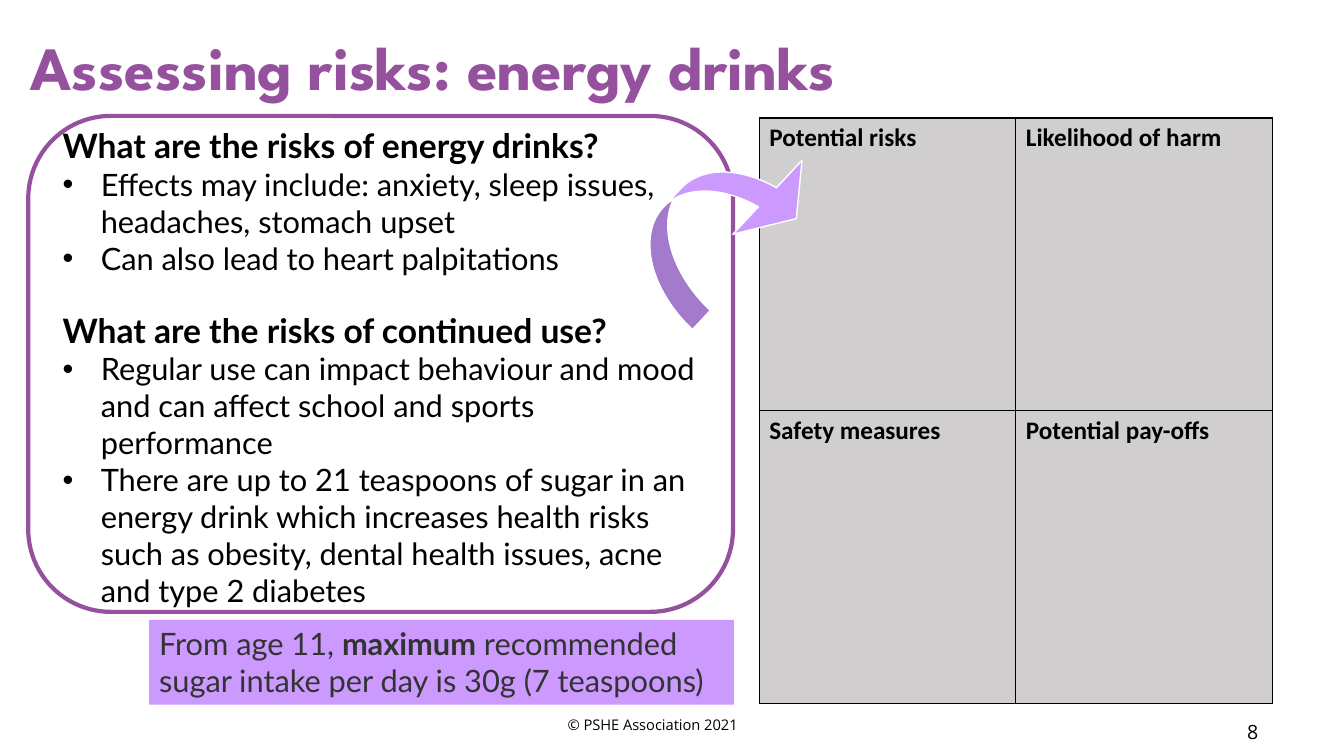
from dataclasses import dataclass

import pptx
import pptx.dml.color
import pptx.enum.shapes
import pptx.enum.text
import pptx.oxml
import pptx.oxml.ns
import pptx.util
from pptx.util import Inches

PURPLE, LILAC, GREY = "95519E", "CC99FF", "D0CECE"
BLACK, WHITE, DARK = "000000", "FFFFFF", "333333"
LEFT = pptx.enum.text.PP_ALIGN.LEFT
CENTER = pptx.enum.text.PP_ALIGN.CENTER
TOP = pptx.enum.text.MSO_ANCHOR.TOP
MIDDLE = pptx.enum.text.MSO_ANCHOR.MIDDLE
SHAPE = pptx.enum.shapes.MSO_SHAPE


@dataclass
class Style:
    font: str
    size: float
    color: str = BLACK
    bold: bool = False


@dataclass
class Topic:
    head: str
    points: list[str]
    gap: float = 0


TOPICS = [
    Topic("What are the risks of energy drinks?", [
        "Effects may include: anxiety, sleep issues, headaches, stomach upset",
        "Can also lead to heart palpitations",
    ]),
    Topic("What are the risks of continued use?", [
        "Regular use can impact behaviour and mood and can affect school "
        "and sports performance",
        "There are up to 21 teaspoons of sugar in an energy drink which "
        "increases health risks such as obesity, dental health issues, "
        "acne and type 2 diabetes",
    ], gap=24),
]
GRID = [["Potential risks", "Likelihood of harm"],
        ["Safety measures", "Potential pay-offs"]]


def paint(target, color: str) -> None:
    """Give a fill, or a font's or line's fill, one solid colour."""
    target.solid()
    target.fore_color.rgb = pptx.dml.color.RGBColor.from_string(color)


def node(tag: str, attrs: str = "", inner: str = ""):
    space = pptx.oxml.ns.nsdecls("a")
    return pptx.oxml.parse_xml(f"<a:{tag} {space} {attrs}>{inner}</a:{tag}>")


def place(shape, left: float, top: float, width: float, height: float) -> None:
    shape.left, shape.top = Inches(left), Inches(top)
    shape.width, shape.height = Inches(width), Inches(height)


def write(para, text: str, style: Style, align=LEFT) -> None:
    para.alignment = align
    para.line_spacing = 1.0
    run = para.add_run()
    run.text = text
    run.font.name = style.font
    run.font.size = pptx.util.Pt(style.size)
    run.font.bold = style.bold
    paint(run.font.fill, style.color)


def setup(frame, anchor=TOP) -> None:
    frame.word_wrap = True
    frame.auto_size = pptx.enum.text.MSO_AUTO_SIZE.NONE
    frame.vertical_anchor = anchor


def draw(slide, kind, box: tuple, fill: str, line: str = "", width: float = 0):
    shape = slide.shapes.add_shape(kind, *map(Inches, box))
    shape.shadow.inherit = False
    paint(shape.fill, fill)
    if line:
        paint(shape.line.fill, line)
        shape.line.width = pptx.util.Pt(width)
    else:
        shape.line.fill.background()
    return shape


def label(slide, box: tuple, text: str, style: Style, anchor=TOP, align=LEFT):
    frame = slide.shapes.add_textbox(*map(Inches, box)).text_frame
    setup(frame, anchor)
    write(frame.paragraphs[0], text, style, align)
    return frame


def fill_list(frame) -> None:
    setup(frame)
    frame.margin_left = frame.margin_right = 0
    frame.margin_top = frame.margin_bottom = 0
    head, point = Style("Lato", 24, bold=True), Style("Lato", 22)
    rows = []
    for topic in TOPICS:
        rows.append((topic.head, head, topic.gap))
        rows += [(text, point, 0) for text in topic.points]
    for i, (text, style, gap) in enumerate(rows):
        para = frame.add_paragraph() if i else frame.paragraphs[0]
        props = para._p.get_or_add_pPr()
        indent = 0 if style is head else Inches(0.38)
        props.set("marL", str(indent))
        props.set("indent", str(-indent))
        if style is head:
            props.append(node("buNone"))
        else:
            props.append(node("buFont", 'typeface="Arial"'))
            props.append(node("buChar", 'char="•"'))
        para.space_before = pptx.util.Pt(gap)
        write(para, text, style)


def add_grid(slide) -> None:
    box = map(Inches, (7.53, 1.17, 5.09, 5.81))
    table = slide.shapes.add_table(2, 2, *box).table
    table.first_row = table.horz_banding = False
    style = Style("Calibri", 18, bold=True)
    for r, row in enumerate(GRID):
        for c, text in enumerate(row):
            cell = table.cell(r, c)
            props = cell._tc.get_or_add_tcPr()
            for side in ("lnL", "lnR", "lnT", "lnB"):
                ink = f'<a:solidFill><a:srgbClr val="{BLACK}"/></a:solidFill>'
                props.append(node(side, 'w="12700"', ink))
            paint(cell.fill, GREY)
            write(cell.text_frame.paragraphs[0], text, style)


def main() -> None:
    deck = pptx.Presentation()
    deck.slide_width, deck.slide_height = Inches(13.33), Inches(7.5)
    slide = deck.slides.add_slide(deck.slide_layouts[1])
    title, body = slide.placeholders

    place(title, 0.2, 0.24, 11.72, 0.84)
    setup(title.text_frame)
    write(title.text_frame.paragraphs[0], "Assessing risks: energy drinks",
          Style("League Spartan", 44, PURPLE, True))

    label(slide, (12.27, 7.09, 0.7, 0.4), "8", Style("Open Sans", 14))
    foot = label(slide, (0, 6.99, 13.33, 0.4), "© PSHE Association 2021",
                 Style("Open Sans", 10.5), MIDDLE, CENTER)
    foot.margin_right = Inches(0.48)

    panel = draw(slide, SHAPE.ROUNDED_RECTANGLE, (0.28, 1.15, 6.99, 4.92),
                 WHITE, PURPLE, 3)
    panel.element.addnext(body.element)
    place(body, 0.62, 1.24, 6.31, 4.8)
    fill_list(body.text_frame)

    add_grid(slide)

    arrow = draw(slide, SHAPE.CURVED_DOWN_ARROW, (6.17, 1.66, 2.01, 1.04),
                 LILAC, WHITE, 1)
    arrow.rotation = 313.1
    for i, value in enumerate((0.25, 0.97, 0.34)):
        arrow.adjustments[i] = value

    note = draw(slide, SHAPE.RECTANGLE, (1.48, 6.15, 5.8, 0.84), LILAC)
    setup(note.text_frame)
    for text, bold in (("From age 11, ", False), ("maximum", True),
                       (" recommended sugar intake per day is "
                        "30g (7 teaspoons)", False)):
        write(note.text_frame.paragraphs[0], text,
              Style("Lato", 22, DARK, bold))

    deck.save("out.pptx")


if __name__ == "__main__":
    main()
